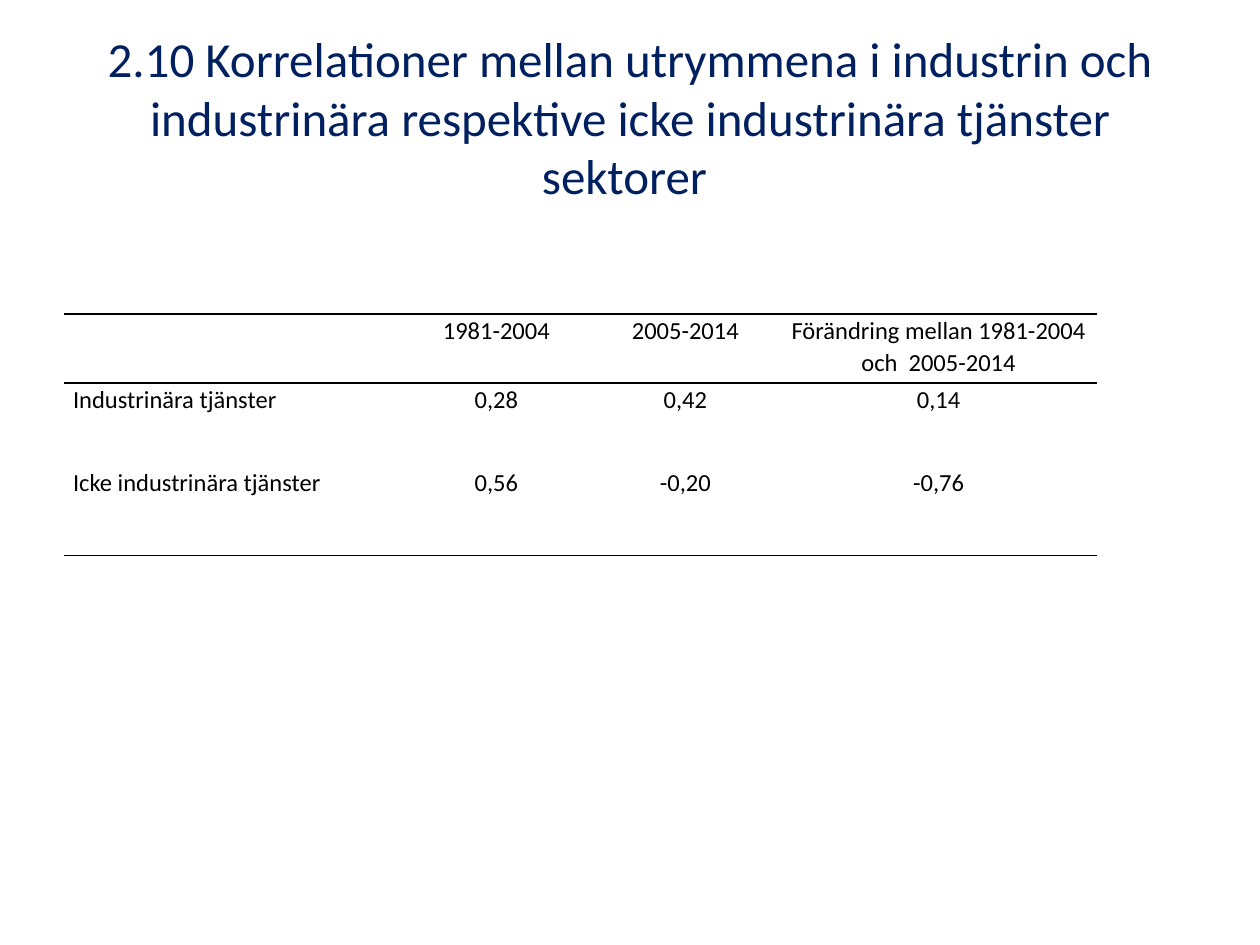
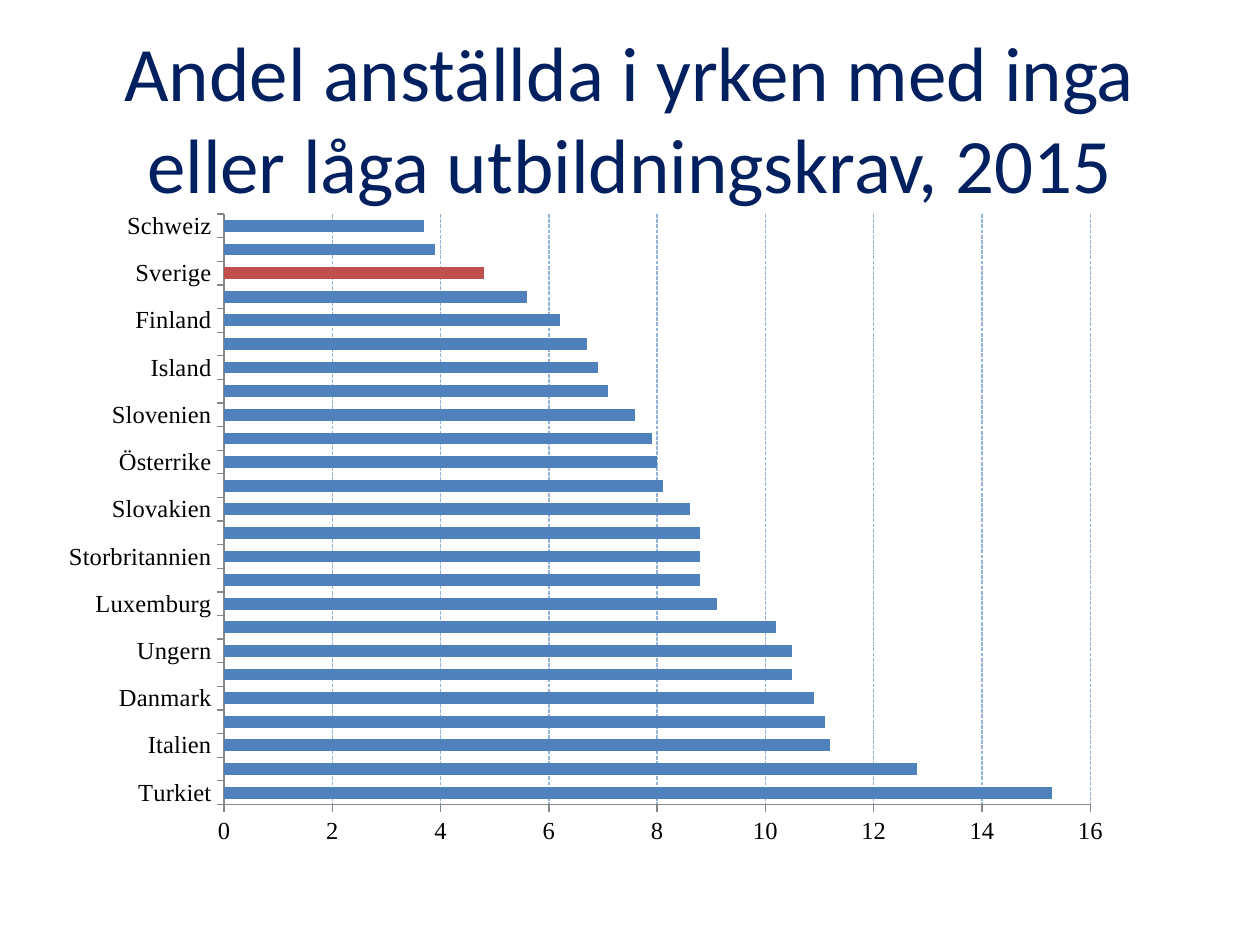
from dataclasses import dataclass

from lxml import etree
from pptx import Presentation
from pptx.chart.data import CategoryChartData
from pptx.dml.color import RGBColor
from pptx.enum.chart import XL_CHART_TYPE, XL_TICK_LABEL_POSITION, XL_TICK_MARK
from pptx.enum.dml import MSO_LINE
from pptx.enum.text import MSO_ANCHOR, MSO_AUTO_SIZE, PP_ALIGN
from pptx.oxml import parse_xml
from pptx.oxml.ns import nsdecls, qn
from pptx.util import Inches, Pt

STACKED_BARS = XL_CHART_TYPE.BAR_STACKED
LABELS_LOW = XL_TICK_LABEL_POSITION.LOW
TICK_OUTSIDE = XL_TICK_MARK.OUTSIDE
TICK_NONE = XL_TICK_MARK.NONE
GRID_DASH = MSO_LINE.SQUARE_DOT
MIDDLE = MSO_ANCHOR.MIDDLE
NO_AUTOFIT = MSO_AUTO_SIZE.NONE
CENTER, JUSTIFY = PP_ALIGN.CENTER, PP_ALIGN.JUSTIFY
TITLE_ONLY = 5


@dataclass(frozen=True)
class Theme:
    title_color: RGBColor = RGBColor.from_string("002060")
    ink: RGBColor = RGBColor.from_string("000000")
    bar: RGBColor = RGBColor.from_string("4F81BD")
    highlight: RGBColor = RGBColor.from_string("C0504D")
    grid: RGBColor = RGBColor.from_string("95B3D7")
    axis: RGBColor = RGBColor.from_string("868686")
    font: str = "Calibri"
    chart_font: str = "Times New Roman"
    long_title_size: int = 28
    title_size: int = 44
    text_size: int = 14


THEME = Theme()

CORRELATIONS = [
    ["", "1981-2004", "2005-2014", "Förändring mellan 1981-2004 och  2005-2014"],
    ["Industrinära tjänster", "0,28", "0,42", "0,14"],
    ["Icke industrinära tjänster", "0,56", "-0,20", "-0,76"],
]
COLUMN_WIDTHS = [2.68, 1.5, 1.5, 2.52]
ROW_HEIGHTS = [0.55, 0.66, 0.71]

LOW_SKILL_SHARES = {
    "Turkiet": 15.3, "Spanien": 12.8, "Italien": 11.2, "Portugal": 11.1,
    "Danmark": 10.9, "Belgien": 10.5, "Ungern": 10.5, "Frankrike": 10.2,
    "Luxemburg": 9.1, "Irland": 8.8, "Storbritannien": 8.8,
    "Nederländerna": 8.8, "Slovakien": 8.6, "Tyskland": 8.1,
    "Österrike": 8, "Estland": 7.9, "Slovenien": 7.6, "Grekland": 7.1,
    "Island": 6.9, "Polen": 6.7, "Finland": 6.2, "Tjeckien": 5.6,
    "Sverige": 4.8, "Norge": 3.9, "Schweiz": 3.7,
}
HIGHLIGHTED_COUNTRY = "Sverige"


def style_font(font, name, size, color):
    font.name = name
    font.size = Pt(size)
    font.color.rgb = color


def add_titled_slide(prs, title_text, size):
    slide = prs.slides.add_slide(prs.slide_layouts[TITLE_ONLY])
    title = slide.shapes.title
    title.left, title.top = Inches(0.5), Inches(0.3)
    title.width, title.height = Inches(9), Inches(1.25)
    frame = title.text_frame
    frame.word_wrap = True
    frame.auto_size = NO_AUTOFIT
    frame.vertical_anchor = MIDDLE
    paragraph = frame.paragraphs[0]
    paragraph.alignment = CENTER
    run = paragraph.add_run()
    run.text = title_text
    style_font(run.font, THEME.font, size, THEME.title_color)
    return slide


def set_borders(cell, ruled_sides):
    """Rule the given sides (of L, R, T, B) and clear the others."""
    properties = cell._tc.get_or_add_tcPr()
    for side in "LRTB":
        border = etree.SubElement(properties, qn(f"a:ln{side}"), w=str(Pt(1)))
        if side in ruled_sides:
            fill = etree.SubElement(border, qn("a:solidFill"))
            etree.SubElement(fill, qn("a:srgbClr"), val=str(THEME.ink))
        else:
            etree.SubElement(border, qn("a:noFill"))


def fill_cell(cell, text, alignment):
    cell.margin_left = cell.margin_right = Inches(0.07)
    cell.margin_top = cell.margin_bottom = 0
    paragraph = cell.text_frame.paragraphs[0]
    paragraph.alignment = alignment
    paragraph.line_spacing = 1.07
    paragraph.space_after = Pt(8)
    if text:
        run = paragraph.add_run()
        run.text = text
        style_font(run.font, THEME.font, THEME.text_size, THEME.ink)


def add_ruled_table(slide, rows, left, top):
    frame = slide.shapes.add_table(
        len(rows), len(rows[0]), Inches(left), Inches(top),
        Inches(sum(COLUMN_WIDTHS)), Inches(sum(ROW_HEIGHTS)))
    table = frame.table
    table.first_row = table.horz_banding = False
    for column, width in zip(table.columns, COLUMN_WIDTHS):
        column.width = Inches(width)
    # Rules above and below the header, and below the last row
    ruled_sides = ["TB", "T"] + [""] * (len(rows) - 3) + ["B"]
    for r, values in enumerate(rows):
        table.rows[r].height = Inches(ROW_HEIGHTS[r])
        for c, text in enumerate(values):
            cell = table.cell(r, c)
            fill_cell(cell, text, CENTER if c else JUSTIFY)
            set_borders(cell, ruled_sides[r])
            cell.fill.background()


def set_plot_layout(chart, x, y, w, h):
    """Place the inner plot area, in fractions of the chart."""
    plot_area = chart._chartSpace.chart.plotArea
    for layout in plot_area.findall(qn("c:layout")):
        plot_area.remove(layout)
    fractions = "".join(
        f'<c:{tag} val="{value}"/>'
        for tag, value in (("x", x), ("y", y), ("w", w), ("h", h)))
    plot_area.insert(0, parse_xml(
        f'<c:layout {nsdecls("c")}><c:manualLayout><c:layoutTarget val="inner"/>'
        f'<c:xMode val="edge"/><c:yMode val="edge"/>{fractions}'
        '</c:manualLayout></c:layout>'))


def style_axis(axis):
    axis.major_tick_mark = TICK_OUTSIDE
    axis.minor_tick_mark = TICK_NONE
    axis.format.line.color.rgb = THEME.axis
    style_font(axis.tick_labels.font, THEME.chart_font, THEME.text_size, THEME.ink)


def add_country_chart(slide, shares, highlighted, left, top, width, height):
    data = CategoryChartData()
    data.categories = list(shares)
    data.add_series("Series 1", list(shares.values()))
    chart = slide.shapes.add_chart(
        STACKED_BARS, Inches(left), Inches(top), Inches(width), Inches(height),
        data).chart
    chart.has_legend = chart.has_title = False
    style_font(chart.font, THEME.chart_font, THEME.text_size, THEME.ink)
    set_plot_layout(chart, 0.173, 0.057, 0.794, 0.863)

    # Bars
    plot = chart.plots[0]
    plot.vary_by_categories = False
    plot.gap_width = plot.overlap = 100
    bars = plot.series[0]
    bars.format.fill.solid()
    bars.format.fill.fore_color.rgb = THEME.bar
    highlight = bars.points[list(shares).index(highlighted)].format.fill
    highlight.solid()
    highlight.fore_color.rgb = THEME.highlight

    # Axes
    countries, percent = chart.category_axis, chart.value_axis
    for axis in (countries, percent):
        style_axis(axis)
    countries.tick_label_position = LABELS_LOW
    countries.has_major_gridlines = False
    percent.minimum_scale, percent.maximum_scale = 0, 16
    percent.major_unit = 2
    percent.tick_labels.number_format = "0"
    percent.tick_labels.number_format_is_linked = False
    percent.has_major_gridlines = True
    grid = percent.major_gridlines.format.line
    grid.color.rgb = THEME.grid
    grid.width = Pt(0.75)
    grid.dash_style = GRID_DASH


def main():
    prs = Presentation()
    prs.slide_width, prs.slide_height = Inches(10), Inches(7.5)

    # Correlation table
    correlations = add_titled_slide(
        prs, "2.10 Korrelationer mellan utrymmena i industrin och industrinära "
        "respektive icke industrinära tjänster sektorer ", THEME.long_title_size)
    add_ruled_table(correlations, CORRELATIONS, 0.51, 2.49)

    # Low-skill employment by country
    employment = add_titled_slide(
        prs, "Andel anställda i yrken med inga eller låga utbildningskrav, 2015",
        THEME.title_size)
    add_country_chart(employment, LOW_SKILL_SHARES, HIGHLIGHTED_COUNTRY,
                      0.28, 1.39, 8.66, 5.43)

    prs.save("out.pptx")


if __name__ == "__main__":
    main()
